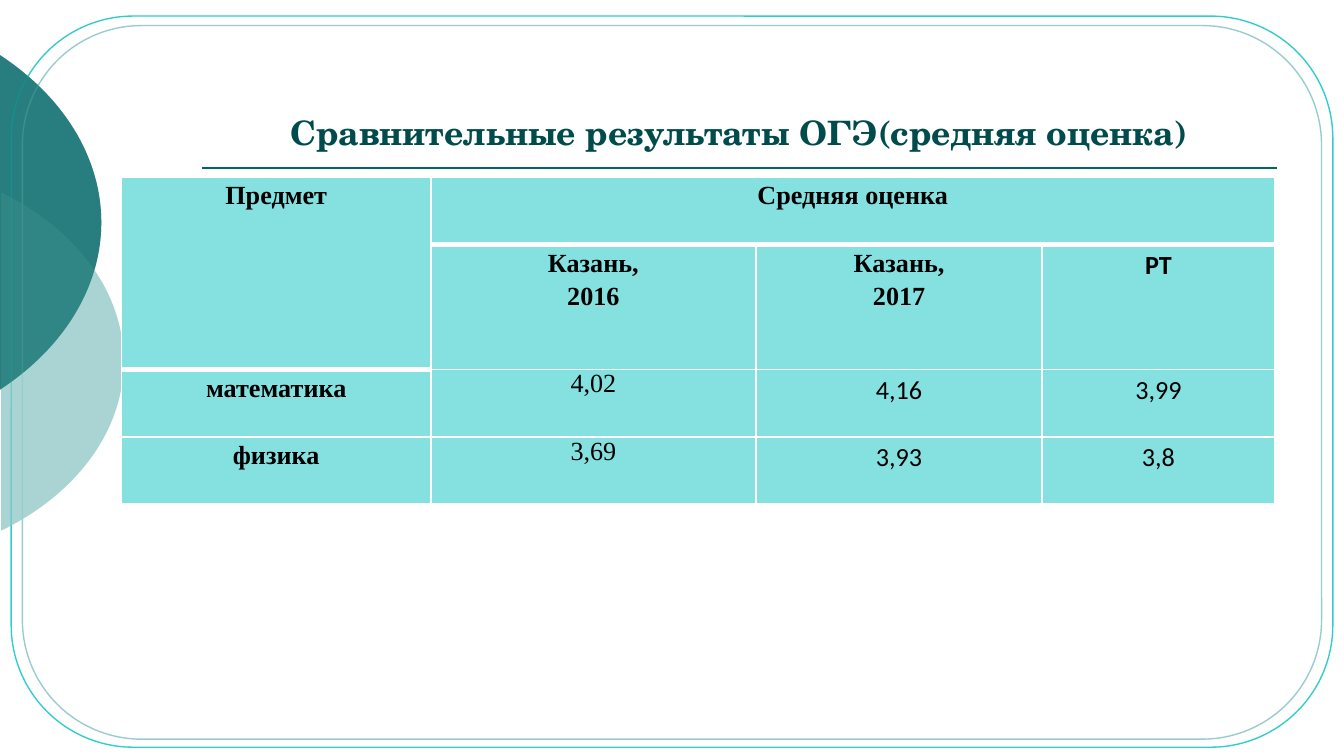
from dataclasses import dataclass
from math import acos, cos, sin, tan

from lxml.etree import SubElement
from pptx import Presentation
from pptx.dml.color import RGBColor
from pptx.enum.shapes import MSO_CONNECTOR, MSO_SHAPE
from pptx.enum.text import MSO_ANCHOR, MSO_AUTO_SIZE, PP_ALIGN
from pptx.oxml.ns import qn
from pptx.util import Pt

SERIF = "Times New Roman"
SANS = "Calibri"


@dataclass(frozen=True)
class Disc:
    left: float
    top: float
    width: float
    height: float
    cut: float
    color: str
    opacity: int


@dataclass(frozen=True)
class Frame:
    left: float
    top: float
    width: float
    height: float
    color: str


@dataclass(frozen=True)
class Entry:
    text: str
    font: str = SERIF
    bold: bool = True
    spacing: float = 1.15


DISCS = (
    Disc(-221.76, 85.68, 288, 216, 0.6, "99CCCC", 58),
    Disc(-264, 0, 318.24, 238.32, -0.6, "006666", 60),
)
FRAMES = (
    Frame(6, 8.64, 708, 391.68, "33CCCC"),
    Frame(12, 13.68, 696, 382.32, "99CCCC"),
)
COLUMN_WIDTHS = (165.6, 174.24, 153.36, 124.56)
ROW_HEIGHTS = (36, 67, 36, 36)


def result_row(subject: str, kazan_2016: str, kazan_2017: str, republic: str) -> tuple:
    return (
        Entry(subject),
        Entry(kazan_2016, bold=False, spacing=1.0),
        Entry(kazan_2017, SANS, False),
        Entry(republic, SANS, False),
    )


RESULTS = (
    (Entry("Предмет"), Entry("Средняя оценка"), None, None),
    (None, Entry("Казань,\n2016"), Entry("Казань,\n2017"), Entry("РТ", SANS)),
    result_row("математика", "4,02", "4,16", "3,99"),
    result_row("физика", "3,69", "3,93", "3,8"),
)


def rgb(hex_color: str) -> RGBColor:
    return RGBColor.from_string(hex_color)


def add_curve(outline, points: tuple) -> None:
    curve = SubElement(outline, qn("a:cubicBezTo"))
    for x, y in points:
        SubElement(curve, qn("a:pt"), x=str(Pt(x)), y=str(Pt(y)))


def draw_disc(slide, disc: Disc) -> None:
    radius_x, radius_y = disc.width / 2, disc.height / 2
    cut = disc.cut - disc.left
    angle = acos((cut - radius_x) / radius_x)
    pull = 4 / 3 * tan(angle / 4)
    rise = radius_y * sin(angle)
    near_cut = cut + pull * radius_x * sin(angle)
    near_rise = rise - pull * radius_y * cos(angle)
    tip_pull = pull * radius_y

    builder = slide.shapes.build_freeform(Pt(cut), Pt(radius_y - rise))
    builder.add_line_segments([(Pt(disc.width), Pt(radius_y)), (Pt(cut), Pt(radius_y + rise))])
    segment = builder.convert_to_shape()
    segment.left, segment.top = Pt(disc.left), Pt(disc.top)
    segment.width, segment.height = Pt(disc.width), Pt(disc.height)

    outline = next(segment.element.iter(qn("a:path")))
    outline.set("w", str(Pt(disc.width)))
    outline.set("h", str(Pt(disc.height)))
    start = outline.find(qn("a:moveTo"))[0]
    start.set("x", str(Pt(cut)))
    start.set("y", str(Pt(radius_y - rise)))
    for part in list(outline)[1:]:
        outline.remove(part)
    add_curve(outline, (
        (near_cut, radius_y - near_rise),
        (disc.width, radius_y - tip_pull),
        (disc.width, radius_y),
    ))
    add_curve(outline, (
        (disc.width, radius_y + tip_pull),
        (near_cut, radius_y + near_rise),
        (cut, radius_y + rise),
    ))
    SubElement(outline, qn("a:close"))

    segment.shadow.inherit = False
    segment.fill.solid()
    segment.fill.fore_color.rgb = rgb(disc.color)
    segment.line.fill.background()
    color = segment.element.spPr.find(qn("a:solidFill"))[0]
    SubElement(color, qn("a:alpha"), val=str(disc.opacity * 1000))


def draw_frame(slide, frame: Frame) -> None:
    border = slide.shapes.add_shape(
        MSO_SHAPE.ROUNDED_RECTANGLE,
        Pt(frame.left), Pt(frame.top), Pt(frame.width), Pt(frame.height),
    )
    border.adjustments[0] = 0.167
    border.shadow.inherit = False
    border.fill.background()
    border.line.color.rgb = rgb(frame.color)
    border.line.width = Pt(0.75)


def draw_rule(slide) -> None:
    rule = slide.shapes.add_connector(
        MSO_CONNECTOR.STRAIGHT, Pt(108), Pt(90), Pt(684), Pt(90)
    )
    rule.line.color.rgb = rgb("006666")
    rule.line.width = Pt(1)
    SubElement(rule.element.spPr, qn("a:effectLst"))


def write_title(slide) -> None:
    title = slide.shapes.title
    title.element.getparent().append(title.element)
    title.left, title.top, title.width, title.height = Pt(108), Pt(18), Pt(576), Pt(67.2)
    frame = title.text_frame
    frame.text = "Сравнительные результаты ОГЭ(средняя оценка)"
    frame.auto_size = MSO_AUTO_SIZE.NONE
    frame.vertical_anchor = MSO_ANCHOR.BOTTOM
    heading = frame.paragraphs[0]
    heading.alignment = PP_ALIGN.CENTER
    heading.font.name = "TeX Gyre Schola"
    heading.font.size = Pt(18)
    heading.font.bold = True
    heading.font.color.rgb = rgb("004C4D")


def style_cell(cell, row: int, column: int) -> None:
    header_rows = 2 if column == 0 else 1
    top = 3 if row == header_rows else 1
    bottom = 3 if row == header_rows - 1 else 1
    properties = cell._tc.get_or_add_tcPr()
    for side, width in (("L", 1), ("R", 1), ("T", top), ("B", bottom)):
        edge = SubElement(properties, qn(f"a:ln{side}"), w=str(Pt(width)))
        SubElement(SubElement(edge, qn("a:solidFill")), qn("a:srgbClr"), val="FFFFFF")
    cell.fill.solid()
    cell.fill.fore_color.rgb = rgb("85E0E0")
    cell.margin_left = cell.margin_right = Pt(5)
    cell.margin_top = cell.margin_bottom = 0


def write_entry(cell, entry: Entry) -> None:
    cell.text = entry.text
    for paragraph in cell.text_frame.paragraphs:
        paragraph.alignment = PP_ALIGN.CENTER
        paragraph.line_spacing = entry.spacing
        paragraph.font.name = entry.font
        paragraph.font.size = Pt(14)
        paragraph.font.bold = entry.bold
        paragraph.font.color.rgb = rgb("000000")


def draw_results(slide) -> None:
    table = slide.shapes.add_table(
        len(ROW_HEIGHTS), len(COLUMN_WIDTHS),
        Pt(65.2), Pt(95), Pt(sum(COLUMN_WIDTHS)), Pt(sum(ROW_HEIGHTS)),
    ).table
    for column, width in zip(table.columns, COLUMN_WIDTHS):
        column.width = Pt(width)
    for row, height in zip(table.rows, ROW_HEIGHTS):
        row.height = Pt(height)
    table.cell(0, 0).merge(table.cell(1, 0))
    table.cell(0, 1).merge(table.cell(0, 3))
    for row, entries in enumerate(RESULTS):
        for column, entry in enumerate(entries):
            cell = table.cell(row, column)
            style_cell(cell, row, column)
            if entry:
                write_entry(cell, entry)


def main() -> None:
    presentation = Presentation()
    presentation.slide_width, presentation.slide_height = Pt(720), Pt(405)
    slide = presentation.slides.add_slide(presentation.slide_layouts[5])
    for disc in DISCS:
        draw_disc(slide, disc)
    for frame in FRAMES:
        draw_frame(slide, frame)
    draw_rule(slide)
    for disc in DISCS:
        draw_disc(slide, disc)
    write_title(slide)
    draw_results(slide)
    presentation.save("out.pptx")


if __name__ == "__main__":
    main()
